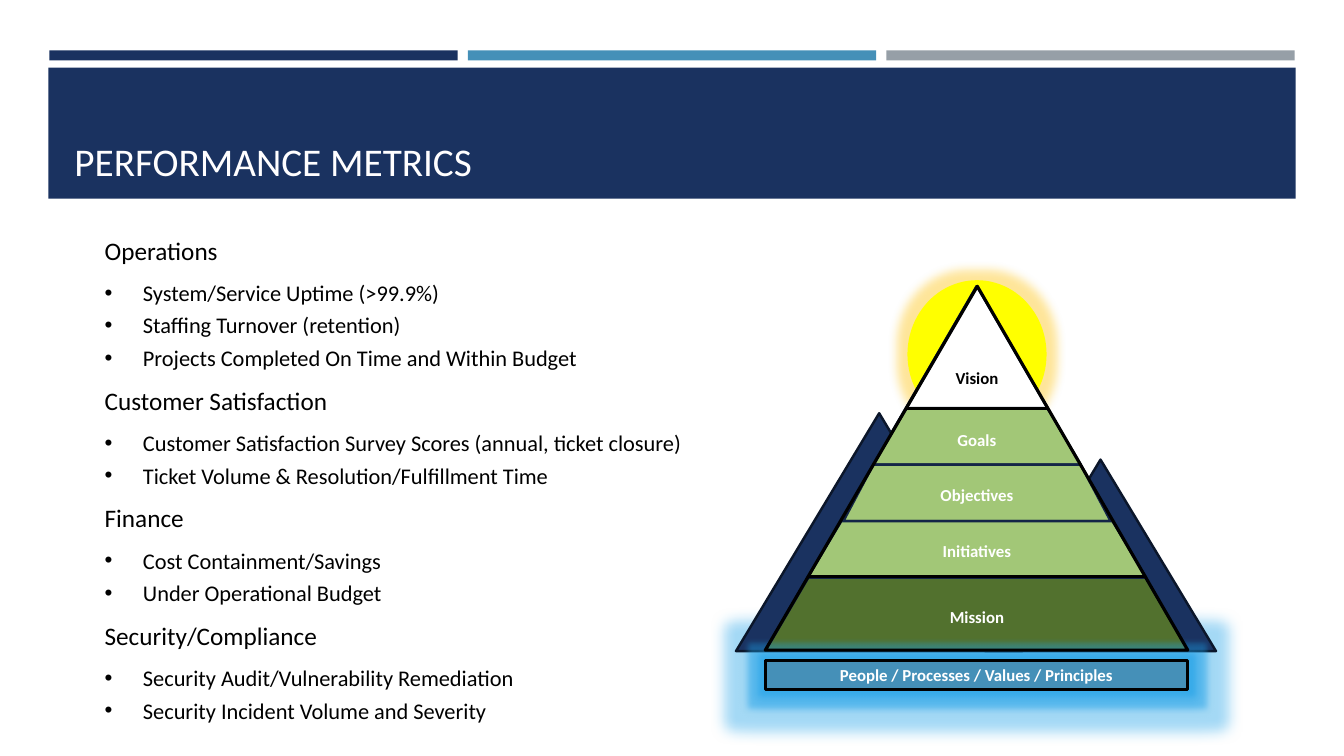
import pptx
import pptx.util
import pptx.dml.color
import pptx.enum.shapes
import pptx.enum.text
import pptx.oxml
import pptx.oxml.ns
from lxml import etree

Inches = pptx.util.Inches
Pt = pptx.util.Pt
Shape = pptx.enum.shapes.MSO_SHAPE
Align = pptx.enum.text.PP_ALIGN
Anchor = pptx.enum.text.MSO_ANCHOR

COLORS = {
    "navy": "1A3260", "blue": "4590B8", "gray": "969FA7", "title": "FFFEFF",
    "white": "FFFFFF", "black": "000000", "yellow": "FFFF00", "ice": "DAF5FA",
    "green": "A2C777", "forest": "52712E", "edge": "132547",
    "mountain_edge": "0B162A", "sun_glow": "FFC000", "base_glow": "1CA0E8",
}
METRICS = {
    "Operations": ["System/Service Uptime (>99.9%)", "Staffing Turnover (retention)",
                   "Projects Completed On Time and Within Budget"],
    "Customer Satisfaction": ["Customer Satisfaction Survey Scores (annual, ticket closure)",
                              "Ticket Volume & Resolution/Fulfillment Time"],
    "Finance": ["Cost Containment/Savings", "Under Operational Budget"],
    "Security/Compliance": ["Security Audit/Vulnerability Remediation",
                            "Security Incident Volume and Severity"],
}


def color(name):
    return pptx.dml.color.RGBColor.from_string(COLORS[name])


def set_attributes(target, values):
    for name, value in values.items():
        setattr(target, name, value)


class SlideBuilder:
    font = "Calibri"

    def __init__(self, slide):
        self.slide = slide

    def add_text(self, paragraph, text, size, text_color, bold=False):
        run = paragraph.add_run()
        run.text = text
        set_attributes(run.font, {"name": self.font, "size": Pt(size), "bold": bold})
        run.font.color.rgb = color(text_color)

    def shape(self, kind, box, fill=None, line=None, adjust=None, glow=None):
        """Add a preset shape; line is (color, points), glow is (color, points)."""
        shape = self.slide.shapes.add_shape(kind, *map(Inches, box))
        shape.shadow.inherit = False
        if fill:
            shape.fill.solid()
            shape.fill.fore_color.rgb = color(fill)
        else:
            shape.fill.background()
        if line:
            shape.line.color.rgb = color(line[0])
            shape.line.width = Pt(line[1])
        else:
            shape.line.fill.background()
        if adjust is not None:
            shape.adjustments[0] = adjust
        if glow:
            self.glow(shape, *glow)
        return shape

    def glow(self, shape, glow_color, points):
        qn = pptx.oxml.ns.qn
        effects = shape.element.spPr.find(qn("a:effectLst"))
        glow = etree.SubElement(effects, qn("a:glow"), rad=str(Pt(points)))
        tint = etree.SubElement(glow, qn("a:srgbClr"), val=COLORS[glow_color])
        etree.SubElement(tint, qn("a:alpha"), val="40000")

    def label(self, shape, text, text_color="white"):
        frame = shape.text_frame
        set_attributes(frame, {
            "margin_left": 0, "margin_right": 0, "margin_top": 0, "margin_bottom": 0,
            "vertical_anchor": Anchor.MIDDLE, "word_wrap": True})
        frame.paragraphs[0].alignment = Align.CENTER
        self.add_text(frame.paragraphs[0], text, 12, text_color, bold=True)

    def text_box(self, box, anchor):
        frame = self.slide.shapes.add_textbox(*map(Inches, box)).text_frame
        set_attributes(frame, {"word_wrap": True, "vertical_anchor": anchor})
        return frame

    def metrics(self, box, groups):
        frame = self.text_box(box, Anchor.MIDDLE)
        rows = []
        for heading, items in groups.items():
            rows.append((heading, 18, False, 6))
            rows += [(item, 16, True, 6 if item == items[-1] else 0) for item in items]
        for index, (text, size, bulleted, after) in enumerate(rows):
            paragraph = frame.add_paragraph() if index else frame.paragraphs[0]
            set_attributes(paragraph, {"space_before": Pt(4), "space_after": Pt(after)})
            self.indent(paragraph, bulleted)
            self.add_text(paragraph, text, size, "black")

    def indent(self, paragraph, bulleted):
        qn = pptx.oxml.ns.qn
        properties = paragraph._p.get_or_add_pPr()
        properties.set("marL", str(Inches(0.88 if bulleted else 0.5)))
        properties.set("indent", str(Inches(-0.38 if bulleted else 0)))
        if bulleted:
            etree.SubElement(properties, qn("a:buFont"), typeface="Arial")
            etree.SubElement(properties, qn("a:buChar"), char="•")

    def horizontal_line(self, left, right, top):
        connector = self.slide.shapes.add_connector(
            pptx.enum.shapes.MSO_CONNECTOR.STRAIGHT,
            Inches(left), Inches(top), Inches(right), Inches(top))
        connector.line.color.rgb = color("black")
        connector.line.width = Pt(2)
        etree.SubElement(connector.element.spPr, pptx.oxml.ns.qn("a:effectLst"))


def add_header(builder):
    for index, fill in enumerate(["navy", "blue", "gray"]):
        builder.shape(Shape.RECTANGLE, (0.49 + 4.15 * index, 0.5, 4.05, 0.1), fill)
    builder.shape(Shape.RECTANGLE, (0.48, 0.67, 12.37, 1.3), "navy")
    title = builder.text_box((0.64, 0.77, 12.06, 1.11), Anchor.BOTTOM)
    builder.add_text(title.paragraphs[0], "PERFORMANCE METRICS", 28, "title")


def add_pyramid(builder):
    pyramid = (7.59, 2.84, 4.19, 3.61)
    center = 9.69
    edge = ("edge", 1.75)
    builder.shape(Shape.RECTANGLE, (7.59, 6.56, 4.19, 0.29), "navy", glow=("base_glow", 20))
    for mountain in [(7.3, 4.1, 2.84, 2.36), (9.77, 4.56, 2.29, 1.9)]:
        builder.shape(Shape.ISOSCELES_TRIANGLE, mountain, "navy", ("mountain_edge", 1.75))
    builder.shape(Shape.OVAL, (9, 2.78, 1.38, 1.47), "yellow", glow=("sun_glow", 14))
    builder.shape(Shape.ISOSCELES_TRIANGLE, pyramid, "ice", edge)

    vision = builder.shape(Shape.ISOSCELES_TRIANGLE, (8.99, 2.84, 1.4, 1.21), "white", edge)
    builder.label(vision, "Vision", "black")
    layers = [
        ("Mission", 5.73, 4.19, 0.72, 0.587, "forest"),
        ("Goals", 4.05, 2.06, 0.56, 0.59, "green"),
        ("Objectives", 4.61, 2.65, 0.56, 0.53, "green"),
        ("Initiatives", 5.17, 3.36, 0.56, 0.598, "green"),
    ]
    for text, top, width, height, slope, fill in layers:
        box = (center - width / 2, top, width, height)
        builder.label(builder.shape(Shape.TRAPEZOID, box, fill, edge, slope), text)
    base = builder.shape(Shape.RECTANGLE, (7.59, 6.55, 4.19, 0.29), "blue", ("black", 2),
                         glow=("base_glow", 8))
    builder.label(base, "People / Processes / Values / Principles")

    builder.shape(Shape.ISOSCELES_TRIANGLE, pyramid, line=("black", 2.25), adjust=0.502)
    builder.horizontal_line(8.99, 10.39, 4.05)
    builder.horizontal_line(8.01, 11.37, 5.72)


def main():
    presentation = pptx.Presentation()
    set_attributes(presentation, {"slide_width": Inches(13.33), "slide_height": Inches(7.5)})
    builder = SlideBuilder(presentation.slides.add_slide(presentation.slide_layouts[6]))
    add_header(builder)
    builder.metrics((0.44, 2.8, 12.4, 3.91), METRICS)
    add_pyramid(builder)
    presentation.save("out.pptx")


if __name__ == "__main__":
    main()
